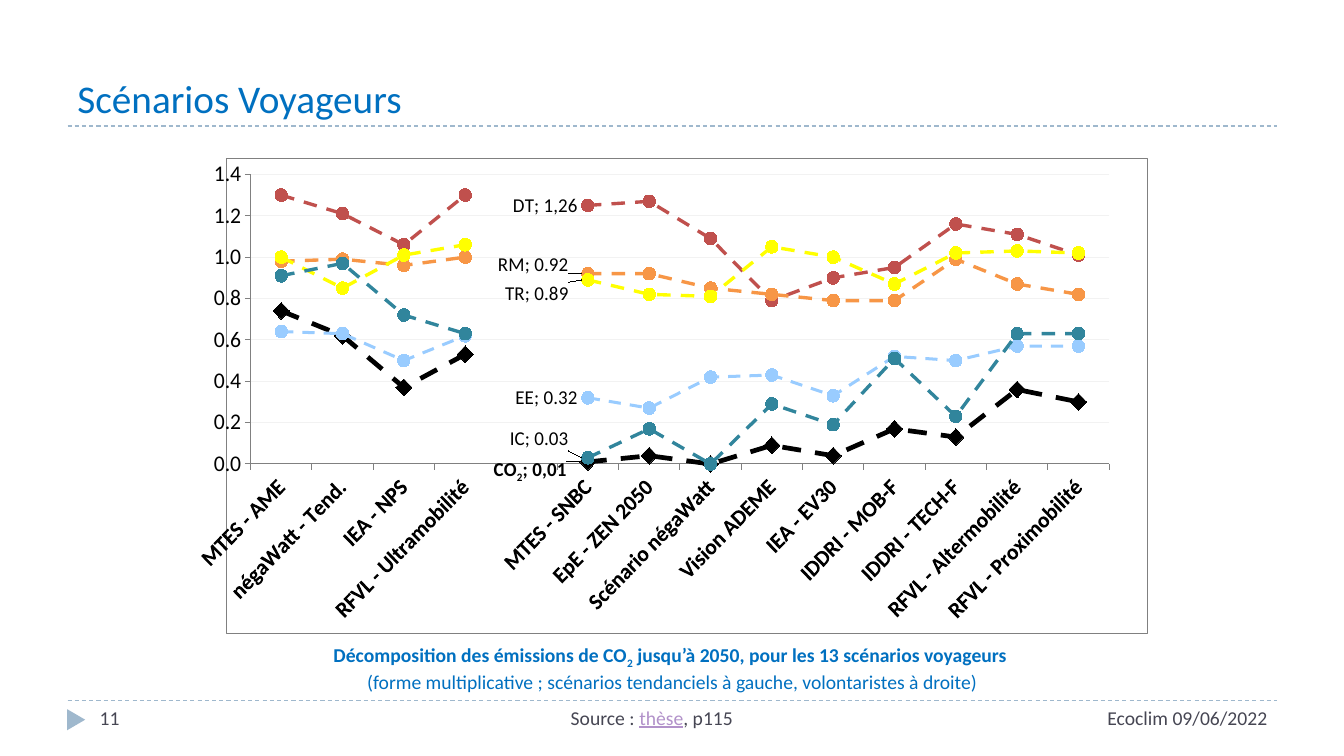
from lxml import etree
from pptx import Presentation
from pptx.chart.data import CategoryChartData
from pptx.dml.color import RGBColor
from pptx.enum import chart as ch, dml, shapes, text
from pptx.oxml import parse_xml
from pptx.oxml.ns import nsdecls, qn
from pptx.util import Inches, Pt

BLUE = RGBColor(0x00, 0x70, 0xC0)
SLATE = RGBColor(0x46, 0x46, 0x53)
PALE = RGBColor(0x9F, 0xB8, 0xCD)
LILAC = RGBColor(0xB2, 0x92, 0xCA)
BLACK = RGBColor(0, 0, 0)
GRAY = RGBColor(0x80, 0x80, 0x80)
GRID = RGBColor(0xF2, 0xF2, 0xF2)
RED = RGBColor(0xC0, 0x50, 0x4D)
ORANGE = RGBColor(0xF7, 0x96, 0x46)
YELLOW = RGBColor(0xFF, 0xFF, 0x00)
SKY = RGBColor(0x99, 0xCC, 0xFF)
TEAL = RGBColor(0x31, 0x85, 0x9C)

FONT = "Calibri"
LEFT, CENTER, RIGHT = text.PP_ALIGN.LEFT, text.PP_ALIGN.CENTER, text.PP_ALIGN.RIGHT
SUB = {"baseline": "-25000"}

# box, alignment, size, colour, paragraphs of (text, font values, run attributes)
TITLE = ((0.67, 0.17, 12, 1.08), LEFT, 28, BLUE, [[("Scénarios Voyageurs", {}, {})]])
TEXTS = [
    ((9.33, 6.95, 3.34, 0.4), RIGHT, 14, SLATE, [[("Ecoclim 09/06/2022", {}, {})]]),
    ((0.89, 6.95, 2.89, 0.4), LEFT, 14, SLATE, [[("11", {}, {})]]),
    ((1.67, 6.33, 10, 0.57), CENTER, 14, BLUE, [
        [("Décomposition des émissions de CO", {"bold": True}, {}),
         ("2", {"bold": True}, SUB),
         (" jusqu’à 2050, pour les 13 scénarios voyageurs ", {"bold": True}, {})],
        [("(forme multiplicative ; scénarios tendanciels à gauche, "
          "volontaristes à droite)", {}, {})]]),
    ((3.12, 6.95, 6.69, 0.51), CENTER, 14, SLATE, [
        [("Source : ", {}, {}), ("thèse", {"underline": True, "color": LILAC}, {}),
         (", p115", {}, {})]]),
]
RULES_Y = [1.25, 6.95]

SCENARIOS = ["MTES - AME", "négaWatt - Tend.", "IEA - NPS", "RFVL - Ultramobilité", "",
             "MTES - SNBC", "EpE - ZEN 2050", "Scénario négaWatt", "Vision ADEME",
             "IEA - EV30", "IDDRI - MOB-F", "IDDRI - TECH-F", "RFVL - Altermobilité",
             "RFVL - Proximobilité"]
LABELLED = SCENARIOS.index("MTES - SNBC")
CHART_BOX = (1.94, 1.57, 9.45, 4.72)
PLOT = {"x": 0.026, "y": 0.033, "w": 0.932, "h": 0.61}

# name, colour, line width, label runs, label shift (share of chart), values
B = {"bold": True}
SERIES = [
    ("CO2", BLACK, 3.5, [("CO", B, {}), ("2", B, SUB), ("; 0,01", B, {})], (-0.01, 0.02),
     [0.74, 0.62, 0.37, 0.53, None, 0.01, 0.04, 0, 0.09, 0.04, 0.17, 0.13, 0.36, 0.3]),
    ("DT", RED, 2.5, [("DT; 1,26", {}, {})], None,
     [1.3, 1.21, 1.06, 1.3, None, 1.25, 1.27, 1.09, 0.79, 0.9, 0.95, 1.16, 1.11, 1.01]),
    ("RM", ORANGE, 2.5, [("RM; 0.92", {}, {})], (-0.01, -0.02),
     [0.98, 0.99, 0.96, 1, None, 0.92, 0.92, 0.85, 0.82, 0.79, 0.79, 0.99, 0.87, 0.82]),
    ("TR", YELLOW, 2.5, [("TR; 0.89", {}, {})], (-0.01, 0.03),
     [1, 0.85, 1.01, 1.06, None, 0.89, 0.82, 0.81, 1.05, 1, 0.87, 1.02, 1.03, 1.02]),
    ("EE", SKY, 2.25, [("EE; 0.32", {}, {})], None,
     [0.64, 0.63, 0.5, 0.62, None, 0.32, 0.27, 0.42, 0.43, 0.33, 0.52, 0.5, 0.57, 0.57]),
    ("IC", TEAL, 2.5, [("IC; 0.03", {}, {})], (-0.01, -0.04),
     [0.91, 0.97, 0.72, 0.63, None, 0.03, 0.17, 0, 0.29, 0.19, 0.51, 0.23, 0.63, 0.63]),
]


def add_runs(p, runs, size, color):
    for words, values, attributes in runs:
        r = p.add_run()
        r.text = words
        font = {"name": FONT, "size": Pt(size), "bold": False, **values}
        r.font.color.rgb = font.pop("color", color)
        for key, value in font.items():
            setattr(r.font, key, value)
        for key, value in attributes.items():
            r.font._element.set(key, value)


def add_text(s, box, align, size, color, paragraphs):
    tf = s.shapes.add_textbox(*map(Inches, box)).text_frame
    tf.word_wrap = True
    for i, runs in enumerate(paragraphs):
        p = tf.add_paragraph() if i else tf.paragraphs[0]
        p.alignment = align
        add_runs(p, runs, size, color)
    return tf


def set_line(line, color, width, dash=None):
    line.color.rgb = color
    line.width = Pt(width)
    if dash:
        line.dash_style = dash


def manual_layout(**values):
    parts = "".join(f'<c:{k} val="{v}"/>' for k, v in values.items())
    return parse_xml(f'<c:layout {nsdecls("c")}><c:manualLayout>{parts}'
                     '</c:manualLayout></c:layout>')


def style_series(series, color, width, runs, shift):
    series.smooth = False
    set_line(series.format.line, color, width, dml.MSO_LINE.DASH)
    diamond = series.name == "CO2"
    marker = series.marker
    marker.style = ch.XL_MARKER_STYLE.DIAMOND if diamond else ch.XL_MARKER_STYLE.CIRCLE
    marker.size = 12 if diamond else 9
    marker.format.fill.solid()
    marker.format.fill.fore_color.rgb = color
    set_line(marker.format.line, color, 0.75)
    label = series.points[LABELLED].data_label
    add_runs(label.text_frame.paragraphs[0], runs, 14, BLACK)
    label.position = ch.XL_LABEL_POSITION.LEFT
    series.data_labels.show_value = False
    if shift:
        idx = series._element.find(f'{qn("c:dLbls")}/{qn("c:dLbl")}/{qn("c:idx")}')
        idx.addnext(manual_layout(x=shift[0], y=shift[1]))


def add_scenario_chart(s):
    data = CategoryChartData(number_format="0.00")
    data.categories = SCENARIOS
    for name, *_, values in SERIES:
        data.add_series(name, values)
    chart = s.shapes.add_chart(ch.XL_CHART_TYPE.LINE_MARKERS, *map(Inches, CHART_BOX), data).chart
    chart.has_legend = chart.has_title = False
    for key, value in {"name": FONT, "size": Pt(16)}.items():
        setattr(chart.font, key, value)
    chart.font.color.rgb = BLACK
    plot = chart.plots[0]
    plot.vary_by_categories = False
    for series, (_, color, width, runs, shift, _) in zip(plot.series, SERIES):
        style_series(series, color, width, runs, shift)

    cat, val = chart.category_axis, chart.value_axis
    for axis in (cat, val):
        axis.major_tick_mark = ch.XL_TICK_MARK.OUTSIDE
        axis.minor_tick_mark = ch.XL_TICK_MARK.NONE
        set_line(axis.format.line, GRAY, 0.75)
    cat.tick_labels.font.bold = True
    cat._element.find(f'{qn("c:txPr")}/{qn("a:bodyPr")}').set("rot", "-2700000")
    val.minimum_scale, val.maximum_scale, val.major_unit = 0, 1.4, 0.2
    val.tick_labels.number_format = "0.0"
    val.tick_labels.number_format_is_linked = False
    set_line(val.major_gridlines.format.line, GRID, 0.75)

    space = chart._chartSpace
    area = space.find(f'{qn("c:chart")}/{qn("c:plotArea")}')
    for old in area.findall(qn("c:layout")):
        area.remove(old)
    area.insert(0, manual_layout(layoutTarget="inner", xMode="edge", yMode="edge", **PLOT))
    space.find(qn("c:chart")).addnext(parse_xml(
        f'<c:spPr {nsdecls("c", "a")}><a:noFill/><a:ln w="{Pt(0.75)}"><a:solidFill>'
        f'<a:srgbClr val="{GRAY}"/></a:solidFill></a:ln></c:spPr>'))


def main():
    prs = Presentation()
    prs.slide_width, prs.slide_height = Inches(13.33), Inches(7.5)
    s = prs.slides.add_slide(prs.slide_layouts[6])
    for y in RULES_Y:
        rule = s.shapes.add_connector(shapes.MSO_CONNECTOR.STRAIGHT, Inches(0.67), Inches(y),
                                      Inches(12.67), Inches(y))
        set_line(rule.line, PALE, 0.75, dml.MSO_LINE.DASH)
        etree.SubElement(rule._element.spPr, qn("a:effectLst"))
    arrow = s.shapes.add_shape(shapes.MSO_SHAPE.ISOSCELES_TRIANGLE,
                               *map(Inches, (0.65, 7.05, 0.21, 0.18)))
    arrow.rotation = 90
    arrow.shadow.inherit = False
    arrow.fill.solid()
    arrow.fill.fore_color.rgb = PALE
    arrow.line.fill.background()
    add_text(s, *TITLE).vertical_anchor = text.MSO_ANCHOR.BOTTOM
    add_scenario_chart(s)
    for item in TEXTS:
        add_text(s, *item)
    prs.save("out.pptx")


if __name__ == "__main__":
    main()
